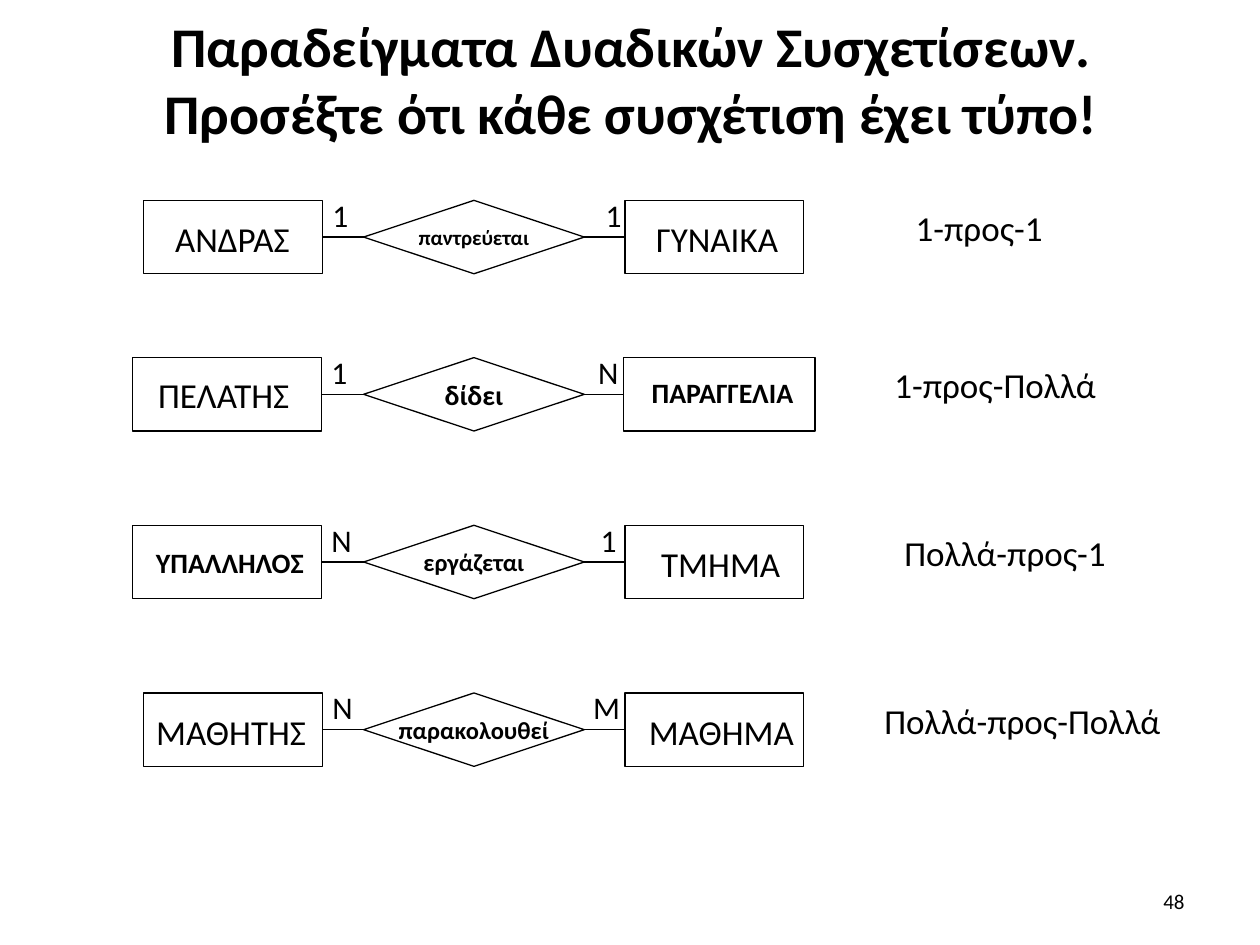
import pptx
import pptx.dml.color
import pptx.enum.shapes
import pptx.enum.text
import pptx.oxml
import pptx.util
from pptx.util import Cm

BLACK = "000000"
SHAPE = pptx.enum.shapes.MSO_SHAPE
ALIGN = pptx.enum.text.PP_ALIGN
ANCHOR = pptx.enum.text.MSO_ANCHOR
AUTO_SIZE = pptx.enum.text.MSO_AUTO_SIZE

LEFT, RIGHT = 1, 3  # connection sites
ROW_LEFT, ROW_HEIGHT = 2.54, 1.48
ROW_TOPS = (4.04, 7.21, 10.59, 13.97)
DIAMOND_X, DIAMOND_WIDTH = 4.79, 4.45

# Offsets and widths in cm from the left of the row:
# entity = box (x, width), label (x, y, width), name, size, bold, centred
# cardinality = (x, width, symbol); kind = (x, width, wording)
RELATIONSHIPS = (
    {"entities": (((0.36, 3.6), (0.74, 0.23, 2.84), "ΑΝΔΡΑΣ", 20, False, False),
                  ((10.06, 3.6), (10.44, 0.23, 3), "ΓΥΝΑΙΚΑ", 20, False, False)),
     "verb": ("παντρεύεται", 12),
     "cardinalities": ((3.91, 0.86, "1"), (9.42, 0.86, "1")),
     "kind": (15.67, 3.6, "1-προς-1")},
    {"entities": (((0.13, 3.81), (0, 0.2, 3.94), "ΠΕΛΑΤΗΣ", 20, False, True),
                  ((10.03, 3.86), (9.88, 0.23, 4.29), "ΠΑΡΑΓΓΕΛΙΑ", 16, True, True)),
     "verb": ("δίδει", 16),
     "cardinalities": ((3.89, 0.86, "1"), (9.27, 0.94, "Ν")),
     "kind": (15.24, 5.08, "1-προς-Πολλά")},
    {"entities": (((0.13, 3.81), (0.33, 0.28, 3.53), "ΥΠΑΛΛΗΛΟΣ", 16, True, True),
                  ((10.06, 3.6), (10.29, 0.23, 3.4), "ΤΜΗΜΑ", 20, False, True)),
     "verb": ("εργάζεται", 14),
     "cardinalities": ((3.89, 0.94, "Ν"), (9.32, 0.86, "1")),
     "kind": (15.44, 5.08, "Πολλά-προς-1")},
    {"entities": (((0.36, 3.6), (0.36, 0.23, 3.56), "ΜΑΘΗΤΗΣ", 20, False, False),
                  ((10.06, 3.6), (10.29, 0.23, 3.48), "ΜΑΘΗΜΑ", 20, False, False)),
     "verb": ("παρακολουθεί", 14),
     "cardinalities": ((3.91, 0.94, "Ν"), (9.17, 1.07, "Μ")),
     "kind": (15.04, 6.55, "Πολλά-προς-Πολλά")},
)


def rgb(hex_colour):
    return pptx.dml.color.RGBColor.from_string(hex_colour)


def apply(target, values):
    for attribute, value in values.items():
        setattr(target, attribute, value)


def write(shape, wording, size, bold=False, align=ALIGN.LEFT, **frame_format):
    frame = shape.text_frame
    apply(frame, {"word_wrap": True, **frame_format})
    paragraph = frame.paragraphs[0]
    paragraph.alignment = align
    run = paragraph.add_run()
    run.text = wording
    apply(run.font, {"name": "Calibri", "size": pptx.util.Pt(size), "bold": bold})
    run.font.color.rgb = rgb(BLACK)


def add_text(shapes, box, *wording, **text_format):
    label = shapes.add_textbox(*map(Cm, box))
    write(label, *wording, **text_format)


def outline(line):
    line.color.rgb = rgb(BLACK)
    line.width = pptx.util.Pt(0.75)


def add_outlined(shapes, preset, box):
    shape = shapes.add_shape(preset, *map(Cm, box))
    shape.shadow.inherit = False
    shape.fill.background()
    outline(shape.line)
    return shape


def add_link(shapes, start, start_site, end, end_site):
    link = shapes.add_connector(pptx.enum.shapes.MSO_CONNECTOR.STRAIGHT, 
                                start.left, start.top, end.left, end.top)
    link.begin_connect(start, start_site)
    link.end_connect(end, end_site)
    outline(link.line)
    link._element.spPr.append(pptx.oxml.parse_xml(
        '<a:effectLst xmlns:a="http://schemas.openxmlformats.org/drawingml/2006/main"/>'))


def add_relationship(slide, left, top, height, relationship):
    shapes = slide.shapes.add_group_shape().shapes

    # Entities with their names
    entities = []
    for (x, width), (name_x, name_y, name_width), name, size, bold, centred in relationship["entities"]:
        entities.append(add_outlined(shapes, SHAPE.RECTANGLE, (left + x, top, width, height)))
        add_text(shapes, (left + name_x, top + name_y, name_width, 1.1), name, size, bold,
                 align=ALIGN.CENTER if centred else ALIGN.LEFT,
                 word_wrap=centred, auto_size=AUTO_SIZE.SHAPE_TO_FIT_TEXT)

    # Relationship diamond, linked to both entities
    diamond = add_outlined(shapes, SHAPE.DIAMOND, (left + DIAMOND_X, top, DIAMOND_WIDTH, height))
    write(diamond, *relationship["verb"], bold=True, align=ALIGN.CENTER,
          word_wrap=False, vertical_anchor=ANCHOR.MIDDLE)
    first, second = entities
    add_link(shapes, diamond, LEFT, first, RIGHT)
    add_link(shapes, second, LEFT, diamond, RIGHT)

    # Cardinalities above the links
    for x, width, symbol in relationship["cardinalities"]:
        add_text(shapes, (left + x, top - 0.22, width, 1.02), symbol, 18,
                 word_wrap=False, auto_size=AUTO_SIZE.SHAPE_TO_FIT_TEXT)

    # Kind of relationship
    x, width, wording = relationship["kind"]
    add_text(shapes, (left + x, top, width, 1.27), wording, 20)


def add_title(slide, box):
    add_text(slide.shapes, box,
             "Παραδείγματα Δυαδικών Συσχετίσεων. Προσέξτε ότι κάθε συσχέτιση έχει τύπο!",
             32, True, align=ALIGN.CENTER, vertical_anchor=ANCHOR.MIDDLE)


def add_page_number(slide, box):
    add_text(slide.shapes, box, "48", 12, align=ALIGN.RIGHT, vertical_anchor=ANCHOR.MIDDLE)


def main():
    deck = pptx.Presentation()
    apply(deck, {"slide_width": Cm(25.4), "slide_height": Cm(19.05)})
    slide = deck.slides.add_slide(deck.slide_layouts[6])
    for top, relationship in zip(ROW_TOPS, RELATIONSHIPS):
        add_relationship(slide, ROW_LEFT, top, ROW_HEIGHT, relationship)
    add_title(slide, (1.3, 0.33, 22.86, 2.51))
    add_page_number(slide, (18.21, 17.65, 5.92, 1.02))
    deck.save("out.pptx")


if __name__ == "__main__":
    main()
